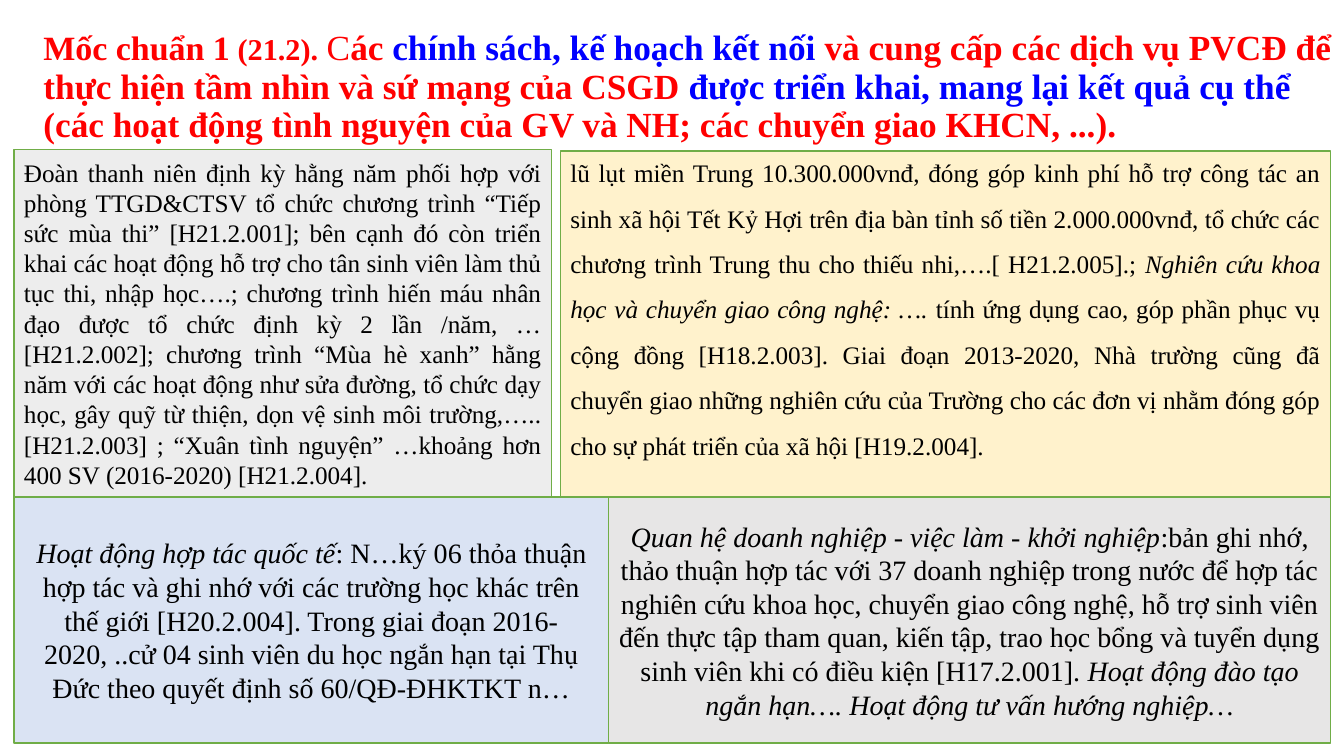
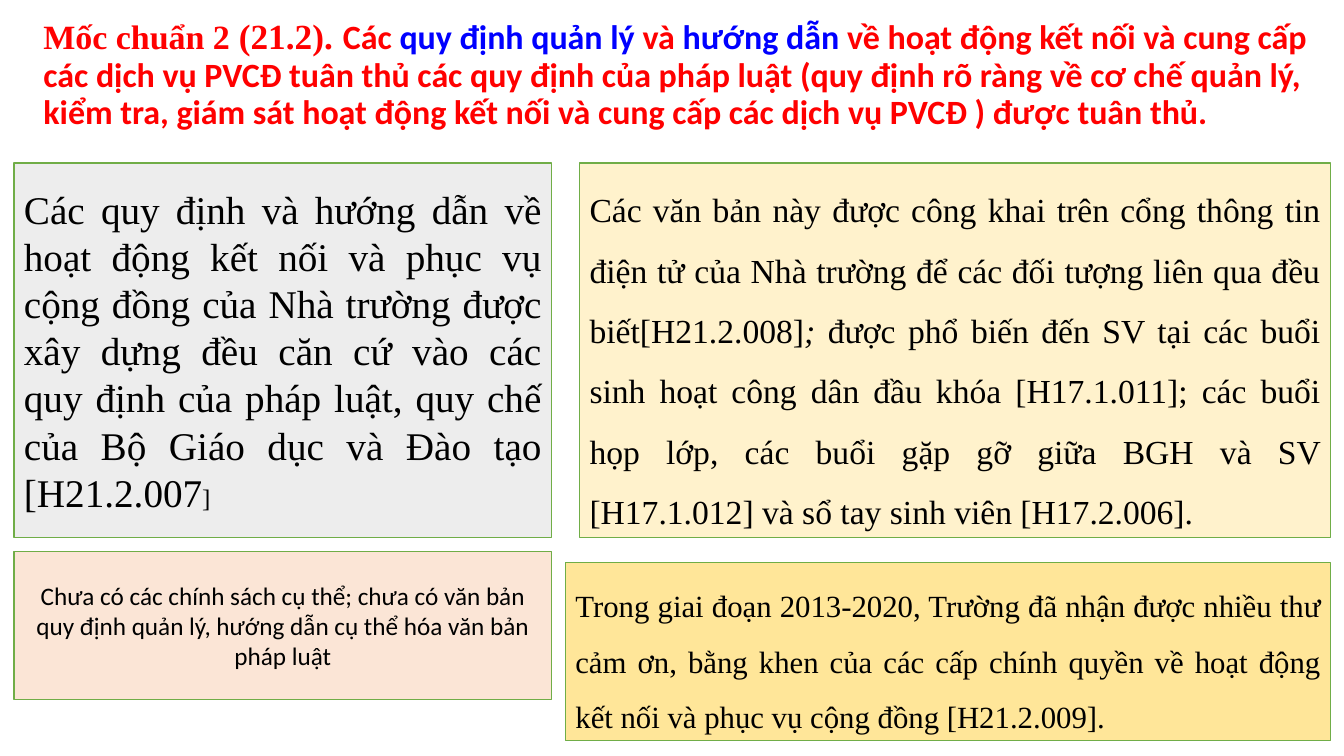
from pptx import Presentation
from pptx.dml.color import RGBColor
from pptx.enum import shapes, text
from pptx.util import Pt

COLORS = {
    "black": "000000", "red": "FF0000", "blue": "0000FF", "green": "70AD47",
    "gray": "EDEDED", "dark gray": "E7E6E6", "cream": "FFF2CC",
    "gold": "FFE699", "sky": "DAE3F3", "peach": "FBE5D6",
}
SERIF, SANS = "Times New Roman", "Calibri"
LEFT, RIGHT = 10, 950.4
LEFT_COLUMN_END = 394
TITLE_LEFT, TITLE_WIDTH = 23.8, 936
ALIGNMENTS = {"justify": text.PP_ALIGN.JUSTIFY, "center": text.PP_ALIGN.CENTER,
              "left": text.PP_ALIGN.LEFT}

BLUE = {"color": "blue"}
ITALIC = {"italic": True}

# Each run is (text, format changes); each box spans (left, top, right, bottom).
SLIDES = [
    {
        "title": {
            "top": 8.6, "height": 108, "font": SERIF, "size": 25.2,
            "runs": [
                ("Mốc chuẩn 1", {"size": 24.3}),
                (" (21.2).", {"size": 21.6}),
                (" ", {"size": 24.3}),
                ("C", {"bold": False}),
                ("ác ", {}),
                ("chính sách, kế hoạch kết nối ", BLUE),
                ("và cung cấp các dịch vụ PVCĐ để thực hiện tầm nhìn và sứ mạng "
                 "của CSGD ", {}),
                ("được triển khai, mang lại kết quả cụ thể ", BLUE),
                ("(các hoạt động tình nguyện của GV và NH; các chuyển giao "
                 "KHCN, ...).", {}),
            ],
        },
        "boxes": [
            {
                "edges": (LEFT, 106.6, LEFT_COLUMN_END, 355), "fill": "gray",
                "format": {"size": 18, "align": "justify"},
                "runs": [
                    ("Đoàn thanh niên định kỳ hằng năm phối hợp với phòng "
                     "TTGD&CTSV tổ chức chương trình “Tiếp sức mùa thi” "
                     "[H21.2.001]; bên cạnh đó còn triển khai các hoạt động hỗ "
                     "trợ cho tân sinh viên làm thủ tục thi, nhập học….; chương "
                     "trình hiến máu nhân đạo được tổ chức định kỳ 2 lần /năm, "
                     "…[H21.2.002]; chương trình “Mùa hè xanh” hằng năm với các "
                     "hoạt động như sửa đường, tổ chức dạy học, gây quỹ từ thiện, "
                     "dọn vệ sinh môi trường,….. [H21.2.003] ; “Xuân tình nguyện” "
                     "…khoảng hơn 400 SV (2016-2020) [H21.2.004].", {}),
                ],
            },
            {
                "edges": (400.3, 108, RIGHT, 355), "fill": "cream",
                "bottom_margin": 36,
                "format": {"size": 18, "align": "justify", "spacing": 1.5},
                "runs": [
                    ("lũ lụt miền Trung 10.300.000vnđ, đóng góp kinh phí hỗ trợ "
                     "công tác an sinh xã hội Tết Kỷ Hợi trên địa bàn tỉnh số "
                     "tiền 2.000.000vnđ, tổ chức các chương trình Trung thu cho "
                     "thiếu nhi,….[ H21.2.005].; ", {}),
                    ("Nghiên cứu khoa học và chuyển giao công nghệ: …. ", ITALIC),
                    ("tính ứng dụng cao, góp phần phục vụ cộng đồng [H18.2.003]. "
                     "Giai đoạn 2013-2020, Nhà trường cũng đã chuyển giao những "
                     "nghiên cứu của Trường cho các đơn vị nhằm đóng góp cho sự "
                     "phát triển của xã hội [H19.2.004].", {}),
                ],
            },
            {
                "edges": (LEFT, 355, 434.9, 530.7), "fill": "sky",
                "format": {"size": 20, "align": "center"},
                "runs": [
                    ("Hoạt động hợp tác quốc tế", ITALIC),
                    (": N…ký 06 thỏa thuận hợp tác và ghi nhớ với các trường học "
                     "khác trên thế giới [H20.2.004]. Trong giai đoạn 2016-2020, "
                     "..cử 04 sinh viên du học ngắn hạn tại Thụ Đức theo quyết "
                     "định số 60/QĐ-ĐHKTKT n…", {}),
                ],
            },
            {
                "edges": (434.9, 355, RIGHT, 530.7), "fill": "dark gray",
                "format": {"size": 20, "align": "center"},
                "runs": [
                    ("Quan hệ doanh nghiệp - việc làm - khởi nghiệp", ITALIC),
                    (":bản ghi nhớ, thảo thuận hợp tác với 37 doanh nghiệp trong "
                     "nước để hợp tác nghiên cứu khoa học, chuyển giao công nghệ, "
                     "hỗ trợ sinh viên đến thực tập tham quan, kiến tập, trao học "
                     "bổng và tuyển dụng sinh viên khi có điều kiện "
                     "[H17.2.001]. ", {}),
                    ("Hoạt động đào tạo ngắn hạn…. Hoạt động tư vấn hướng "
                     "nghiệp…", ITALIC),
                ],
            },
        ],
    },
    {
        "title": {
            "top": 4, "height": 96.5, "font": SANS, "size": 24.3,
            "runs": [
                ("Mốc chuẩn 2", {"font": SERIF}),
                (" (21.2).", {"font": SERIF, "size": 25.2}),
                (" ", {"font": SERIF, "size": 28.8}),
                ("Các ", {}),
                ("quy định quản lý ", BLUE),
                ("và ", {}),
                ("hướng dẫn ", BLUE),
                ("về hoạt động kết nối và cung cấp các dịch vụ PVCĐ tuân thủ các "
                 "quy định của pháp luật (quy định rõ ràng về cơ chế quản lý, "
                 "kiểm tra, giám sát hoạt động kết nối và cung cấp các dịch vụ "
                 "PVCĐ ) được tuân thủ.", {}),
            ],
        },
        "boxes": [
            {
                "edges": (LEFT, 116.6, LEFT_COLUMN_END, 383.8), "fill": "gray",
                "format": {"size": 28, "align": "justify"},
                "runs": [
                    ("Các quy định và hướng dẫn về hoạt động kết nối và phục vụ "
                     "cộng đồng của Nhà trường được xây dựng đều căn cứ vào các "
                     "quy định của pháp luật, quy chế của Bộ Giáo dục và Đào tạo "
                     "[H21.2.007", {}),
                    ("]", {"size": 18}),
                ],
            },
            {
                "edges": (414, 116.6, RIGHT, 383.8), "fill": "cream",
                "format": {"size": 24, "align": "justify", "spacing": 1.5},
                "runs": [
                    ("Các văn bản này được công khai trên cổng thông tin điện tử "
                     "của Nhà trường để các đối tượng liên qua đều "
                     "biết[H21.2.008]", {}),
                    ("; ", ITALIC),
                    ("được phổ biến đến SV tại các buổi sinh hoạt công dân đầu "
                     "khóa [H17.1.011]; các buổi họp lớp, các buổi gặp gỡ giữa "
                     "BGH và SV [H17.1.012] và sổ tay sinh viên [H17.2.006].", {}),
                ],
            },
            {
                "edges": (LEFT, 393.8, LEFT_COLUMN_END, 499.7), "fill": "peach",
                "format": {"size": 18, "align": "center", "font": SANS},
                "runs": [
                    ("Chưa có các chính sách cụ thể; chưa có văn bản quy định "
                     "quản lý, hướng dẫn cụ thể hóa văn bản pháp luật", {}),
                ],
            },
            {
                "edges": (403.9, 401.8, RIGHT, 529.2), "fill": "gold",
                "format": {"size": 22, "align": "justify", "spacing": 1.5},
                "runs": [
                    ("Trong giai đoạn 2013-2020, Trường đã nhận được nhiều thư "
                     "cảm ơn, bằng khen của các cấp chính quyền về hoạt động kết "
                     "nối và phục vụ cộng đồng [H21.2.009].", {}),
                ],
            },
        ],
    },
]


def rgb(name):
    return RGBColor.from_string(COLORS[name])


def write_text(shape, runs, align="left", spacing=1.0, **base):
    """Fill the shape with one paragraph; each run may override the base format."""
    frame = shape.text_frame
    frame.word_wrap = True
    frame.auto_size = text.MSO_AUTO_SIZE.NONE
    frame.vertical_anchor = text.MSO_ANCHOR.MIDDLE
    paragraph = frame.paragraphs[0]
    paragraph.alignment = ALIGNMENTS[align]
    paragraph.line_spacing = spacing
    defaults = {"font": SERIF, "color": "black", "bold": False, "italic": False}
    for content, changes in runs:
        style = {**defaults, **base, **changes}
        run = paragraph.add_run()
        run.text = content
        run.font.name = style["font"]
        run.font.size = Pt(style["size"])
        run.font.bold = style["bold"]
        run.font.italic = style["italic"]
        run.font.color.rgb = rgb(style["color"])


def set_title(slide, top, height, runs, **style):
    title = slide.shapes.title
    title.left, title.top = Pt(TITLE_LEFT), Pt(top)
    title.width, title.height = Pt(TITLE_WIDTH), Pt(height)
    write_text(title, runs, spacing=0.9, color="red", bold=True, **style)


def add_box(slide, box):
    left, top, right, bottom = box["edges"]
    shape = slide.shapes.add_shape(shapes.MSO_SHAPE.RECTANGLE, Pt(left), Pt(top),
                                   Pt(right - left), Pt(bottom - top))
    shape.shadow.inherit = False
    shape.fill.solid()
    shape.fill.fore_color.rgb = rgb(box["fill"])
    shape.line.color.rgb = rgb("green")
    shape.line.width = Pt(1)
    shape.text_frame.margin_bottom = Pt(box.get("bottom_margin", 3.6))
    write_text(shape, box["runs"], **box["format"])


def main():
    presentation = Presentation()
    presentation.slide_width, presentation.slide_height = Pt(960), Pt(540)
    title_only = presentation.slide_layouts[5]
    for content in SLIDES:
        slide = presentation.slides.add_slide(title_only)
        set_title(slide, **content["title"])
        for box in content["boxes"]:
            add_box(slide, box)
    presentation.save("out.pptx")


if __name__ == "__main__":
    main()
